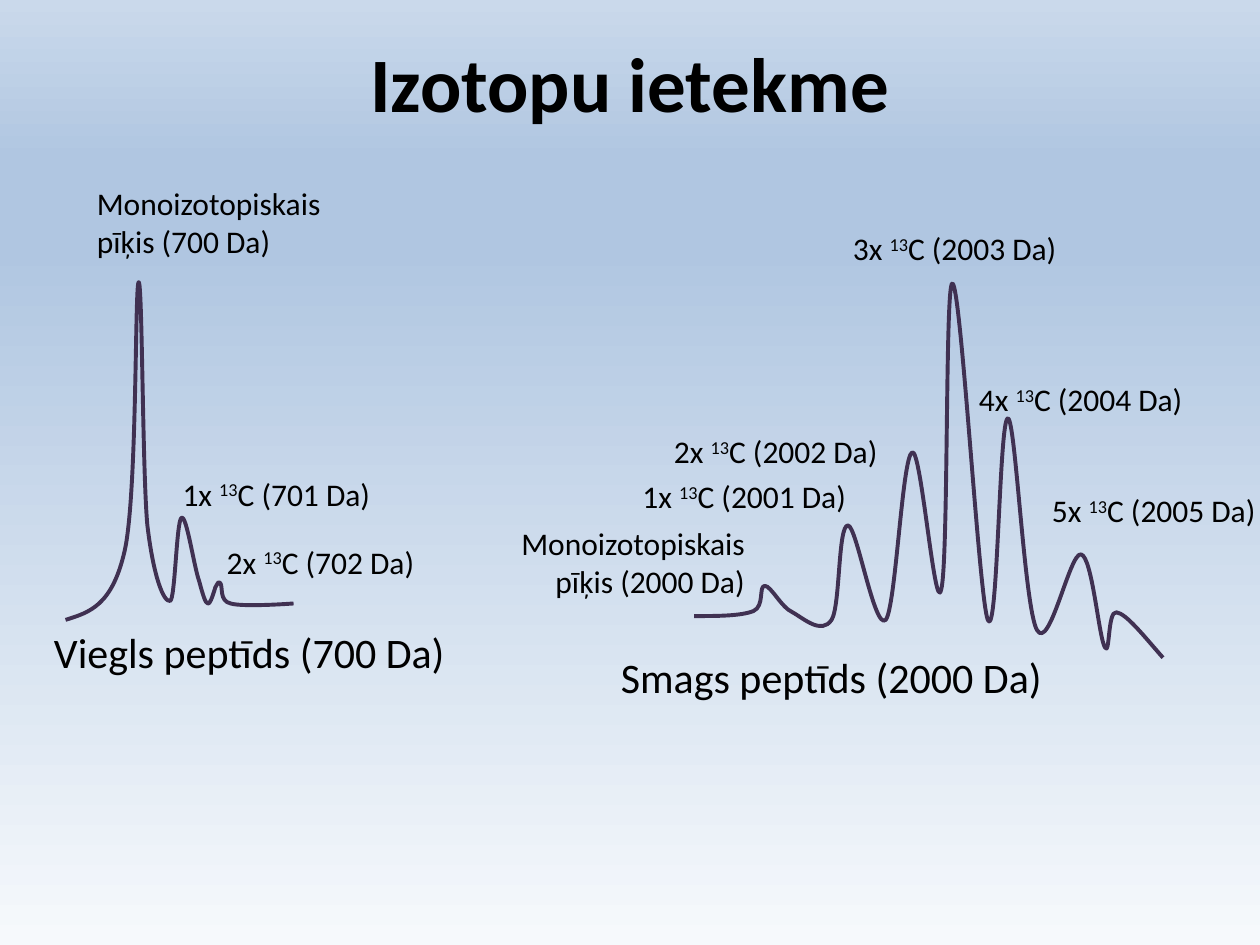
from lxml import etree
from pptx import Presentation
from pptx import util as u
from pptx.dml.color import RGBColor
from pptx.enum import text
from pptx.oxml.ns import qn

BLACK = RGBColor(0x00, 0x00, 0x00)
PLUM = RGBColor(0x40, 0x31, 0x52)
SKY_STOPS = [
    (0, RGBColor(0xF6, 0xF9, 0xFC)),
    (74, RGBColor(0xB0, 0xC6, 0xE1)),
    (83, RGBColor(0xB0, 0xC6, 0xE1)),
    (100, RGBColor(0xCA, 0xD9, 0xEB)),
]
FONT = "Calibri"
LEFT, CENTER, RIGHT = text.PP_ALIGN.LEFT, text.PP_ALIGN.CENTER, text.PP_ALIGN.RIGHT

# Content: ^ marks superscript; places are left, top, width in inches
TITLE = "Izotopu ietekme"
CAPTIONS = [
    ("Viegls peptīds (700 Da)", 0.33, 4.92, 3.42),
    ("Smags peptīds (2000 Da)", 4.83, 5.12, 4),
]
MONOISOTOPIC = [
    ("Monoizotopiskais pīķis (700 Da)", 0.67, 1.41, LEFT),
    ("Monoizotopiskais pīķis (2000 Da)", 3.66, 4.11, RIGHT),
]
# Number of 13C atoms, peptide base mass, left, top
ISOTOPES = [
    (1, 700, 1.35, 3.72),
    (2, 700, 1.7, 4.26),
    (1, 2000, 5, 3.74),
    (2, 2000, 5.25, 3.38),
    (3, 2000, 6.67, 1.77),
    (4, 2000, 7.67, 2.97),
    (5, 2000, 8.25, 3.85),
]
# Spectra in hundredths of an inch: start, then two handles and an end per curve
LIGHT_SPECTRUM = [
    (52, 492),
    (71, 486), (89, 481), (99, 437),
    (109, 392), (107, 228), (110, 224),
    (113, 221), (113, 375), (117, 417),
    (122, 459), (130, 478), (135, 477),
    (139, 476), (140, 414), (144, 411),
    (148, 408), (154, 450), (158, 461),
    (161, 472), (163, 479), (165, 479),
    (167, 480), (170, 469), (171, 466),
    (173, 463), (173, 461), (175, 463),
    (177, 466), (174, 477), (183, 479),
    (193, 482), (233, 479), (233, 479),
]
HEAVY_SPECTRUM = [
    (551, 489),
    (569, 489), (588, 489), (598, 485),
    (607, 481), (602, 465), (607, 465),
    (612, 465), (620, 482), (629, 486),
    (638, 491), (652, 504), (660, 492),
    (667, 481), (665, 417), (673, 417),
    (680, 417), (694, 501), (703, 492),
    (711, 482), (716, 362), (724, 359),
    (731, 355), (742, 490), (747, 468),
    (753, 446), (750, 221), (756, 225),
    (763, 229), (777, 475), (784, 492),
    (792, 510), (793, 331), (800, 332),
    (806, 333), (813, 482), (823, 500),
    (833, 518), (849, 438), (858, 440),
    (867, 442), (872, 506), (877, 514),
    (881, 521), (879, 485), (886, 486),
    (894, 487), (908, 505), (923, 522),
]


def add_label(slide, wording, left, top, width, height=0.4, size=18, bold=False,
              align=LEFT, anchor=text.MSO_ANCHOR.TOP):
    box = slide.shapes.add_textbox(*map(u.Inches, (left, top, width, height)))
    frame = box.text_frame
    frame.word_wrap = True
    frame.vertical_anchor = anchor
    paragraph = frame.paragraphs[0]
    paragraph.alignment = align
    for i, part in enumerate(wording.split("^")):
        run = paragraph.add_run()
        run.text = part
        run.font.name, run.font.size, run.font.bold = FONT, u.Pt(size), bold
        run.font.color.rgb = BLACK
        if i % 2:
            run.font._element.set("baseline", "30000")


def add_spectrum(slide, points):
    builder = slide.shapes.build_freeform(*points[0], scale=u.Inches(1) / 100)
    builder.add_line_segments(points[1:], close=False)
    curve = builder.convert_to_shape()
    curve.shadow.inherit = False
    curve.fill.background()
    curve.line.color.rgb = PLUM
    curve.line.width = u.Pt(2.25)
    # Turn each three straight segments into one Bezier curve
    segments = list(curve.element.iter(qn("a:lnTo")))
    for first in range(0, len(segments), 3):
        trio = segments[first:first + 3]
        bezier = etree.Element(qn("a:cubicBezTo"))
        trio[0].addprevious(bezier)
        for segment in trio:
            bezier.append(segment[0])
            segment.getparent().remove(segment)


def paint_background(slide):
    fill = slide.background.fill
    fill.gradient()
    fill.gradient_angle = 90
    stops = next(slide.element.iter(qn("a:gsLst")))
    for stop in list(stops):
        stops.remove(stop)
    for percent, color in SKY_STOPS:
        stop = etree.SubElement(stops, qn("a:gs"), pos=str(percent * 1000))
        etree.SubElement(stop, qn("a:srgbClr"), val=str(color))


def main():
    deck = Presentation()
    deck.slide_width, deck.slide_height = u.Inches(10), u.Inches(7.5)
    slide = deck.slides.add_slide(deck.slide_layouts[6])
    paint_background(slide)

    # Title
    add_label(slide, TITLE, 0.5, 0.02, 9, 1.25, size=44, bold=True,
              align=CENTER, anchor=text.MSO_ANCHOR.MIDDLE)

    # Spectra with their captions
    for points in (LIGHT_SPECTRUM, HEAVY_SPECTRUM):
        add_spectrum(slide, points)
    for wording, left, top, width in CAPTIONS:
        add_label(slide, wording, left, top, width, 0.5, size=24)

    # Peak labels
    for wording, left, top, align in MONOISOTOPIC:
        add_label(slide, wording, left, top, 2.35, 0.71, align=align)
    for count, mass, left, top in ISOTOPES:
        add_label(slide, f"{count}x ^13^C ({mass + count} Da)", left, top, 2.02)

    deck.save("out.pptx")


if __name__ == "__main__":
    main()
